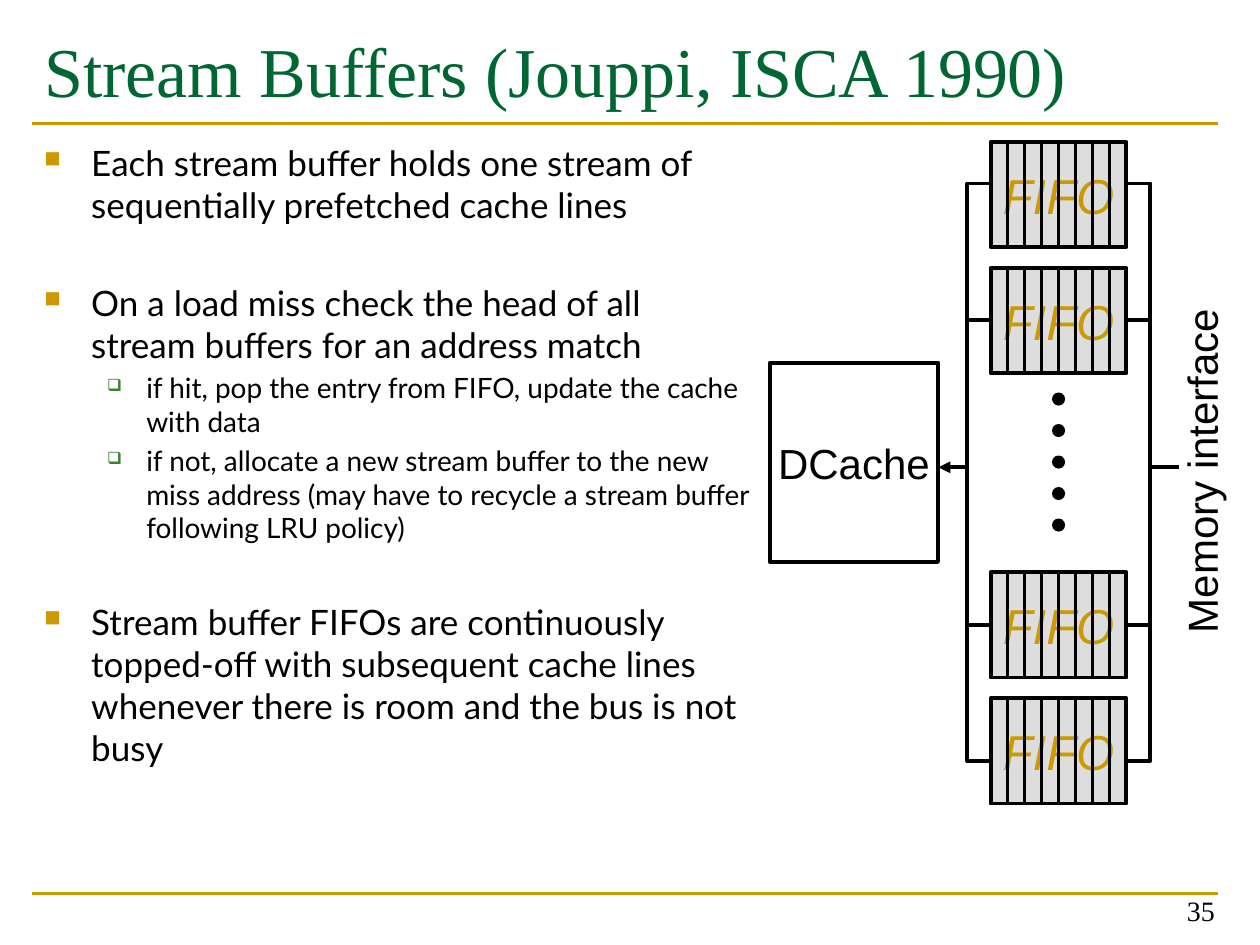
import pptx
import pptx.util
import pptx.dml.color
import pptx.enum.shapes
import pptx.enum.text
import pptx.oxml.ns
import lxml.etree

Cm, Pt = pptx.util.Cm, pptx.util.Pt
SHAPE = pptx.enum.shapes.MSO_SHAPE
ALIGN = pptx.enum.text.PP_ALIGN
ANCHOR = pptx.enum.text.MSO_ANCHOR

COLORS = {
    "gold": "CC9900", "title": "006633", "sub_bullet": "3B812F",
    "black": "000000", "white": "FFFFFF", "fifo": "DDDDDD",
}

# Bullet levels: size, left margin, hanging indent (cm), mark, colour, mark size %
LEVELS = [
    (20, 0.95, 0.95, "■", "gold", 65),
    (16, 2.06, 0.79, "❑", "sub_bullet", 60),
]

# Level, extra space above (pt), wording
POINTS = [
    (0, 0, "Each stream buffer holds one stream of sequentially prefetched cache lines"),
    (0, 28, "On a load miss check the head of all stream buffers for an address match"),
    (1, 0, "if hit, pop the entry from FIFO, update the cache with data"),
    (1, 0, "if not, allocate a new stream buffer to the new miss address "
           "(may have to recycle a stream buffer following LRU policy)"),
    (0, 28, "Stream buffer FIFOs are continuously topped-off with subsequent "
            "cache lines whenever there is room and the bus is not busy"),
]


def rgb(name):
    return pptx.dml.color.RGBColor.from_string(COLORS[name])


def add_child(parent, tag, **attributes):
    return lxml.etree.SubElement(parent, pptx.oxml.ns.qn(tag), attributes)


def add_span(para, text, size, font, color="black", italic=False):
    span = para.add_run()
    span.text = text
    span.font.size = Pt(size)
    span.font.name = font
    span.font.italic = italic
    span.font.color.rgb = rgb(color)


def add_line(shapes, x1, y1, x2, y2, width, color="black", arrow=False):
    line = shapes.add_connector(pptx.enum.shapes.MSO_CONNECTOR.STRAIGHT,
                                Cm(x1), Cm(y1), Cm(x2), Cm(y2))
    line.line.width = Pt(width)
    line.line.color.rgb = rgb(color)
    if arrow:
        add_child(line.line._get_or_add_ln(), "a:tailEnd", type="triangle")
    add_child(line._element.spPr, "a:effectLst")


def add_block(shapes, kind, left, top, width, height, fill, line_width=2.25):
    block = shapes.add_shape(kind, Cm(left), Cm(top), Cm(width), Cm(height))
    block.shadow.inherit = False
    block.fill.solid()
    block.fill.fore_color.rgb = rgb(fill)
    block.line.color.rgb = rgb("black")
    block.line.width = Pt(line_width)
    return block


def add_label(block, text, size, color="black", italic=False):
    frame = block.text_frame
    frame.word_wrap = False
    frame.vertical_anchor = ANCHOR.MIDDLE
    para = frame.paragraphs[0]
    para.alignment = ALIGN.CENTER
    add_span(para, text, size, "Arial", color, italic)


def add_text_box(page, left, top, width, height):
    box = page.shapes.add_textbox(Cm(left), Cm(top), Cm(width), Cm(height))
    box.text_frame.word_wrap = True
    return box


def add_header(page, left, top, width, height):
    add_line(page.shapes, left, top + 2.06, left + width, top + 2.06, 1.5, "gold")
    box = add_text_box(page, left, top, width, height)
    add_span(box.text_frame.paragraphs[0], "Stream Buffers (Jouppi, ISCA 1990)",
             40, "Times New Roman", "title")


def add_footer(page, left, top, width, height):
    add_line(page.shapes, left, top, left + width, top, 1.5, "gold")
    box = add_text_box(page, left + width - 5.74, top - 0.46, 5.92, height)
    box.text_frame.vertical_anchor = ANCHOR.BOTTOM
    para = box.text_frame.paragraphs[0]
    para.alignment = ALIGN.RIGHT
    add_span(para, "35", 16, "Times New Roman")


def add_points(page, left, top, width, height):
    frame = add_text_box(page, left, top, width, height).text_frame
    for index, (level, extra, text) in enumerate(POINTS):
        size, margin, hang, mark, color, percent = LEVELS[level]
        para = frame.add_paragraph() if index else frame.paragraphs[0]
        para.level = level
        para.space_before = Pt(size * 0.2 + extra)
        props = para._p.get_or_add_pPr()
        props.set("marL", str(Cm(margin)))
        props.set("indent", str(-Cm(hang)))
        add_child(add_child(props, "a:buClr"), "a:srgbClr", val=COLORS[color])
        add_child(props, "a:buSzPct", val=str(percent * 1000))
        add_child(props, "a:buChar", char=mark)
        add_span(para, text, size, "Lato")


def add_fifo(page, left, top, width, height, slots=8):
    shapes = page.shapes.add_group_shape().shapes
    block = add_block(shapes, SHAPE.RECTANGLE, left, top, width, height, "fifo")
    add_label(block, "FIFO", 28, "gold", italic=True)
    for slot in range(1, slots):
        x = left + width * slot / slots
        add_line(shapes, x, top, x, top + height, 1.5)


def add_bus(page, rail, top, reach, height, stub, arrow=False):
    """Vertical rail with taps towards the FIFOs and a stub the other way."""
    shapes = page.shapes.add_group_shape().shapes
    inner, bottom = rail + reach, top + height
    builder = shapes.build_freeform(Cm(inner), Cm(top))
    builder.add_line_segments(
        [(Cm(rail), Cm(top)), (Cm(rail), Cm(bottom)), (Cm(inner), Cm(bottom))],
        close=False)
    bracket = builder.convert_to_shape()
    bracket.shadow.inherit = False
    bracket.fill.background()
    bracket.line.color.rgb = rgb("black")
    bracket.line.width = Pt(2.25)
    for y in (top + 2.75, bottom - 2.75):
        add_line(shapes, rail, y, inner, y, 2.25)
    middle = top + 5.72
    add_line(shapes, rail, middle, rail + stub, middle, 2.25, arrow=arrow)


def add_diagram(page, left, top, width, height):
    # Stream buffers: a pair at the top and a pair at the bottom
    fifo_left, fifo_width, fifo_height, pitch = left + 4.45, 2.74, 2.12, 2.54
    last = height - fifo_height
    for offset in (0, pitch, last - pitch, last):
        add_fifo(page, fifo_left, top + offset, fifo_width, fifo_height)

    # Buses on both sides, and the cache
    fifo_right = fifo_left + fifo_width
    add_bus(page, fifo_left - 0.47, top + 0.84, 0.47, 11.64, -0.58, arrow=True)
    cache = add_block(page.shapes, SHAPE.RECTANGLE, left, top + 4.45, 3.39, 4.02, "white")
    add_label(cache, "DCache", 24)
    add_bus(page, fifo_right + 0.48, top + 0.84, -0.48, 11.64, 0.58)

    # Dots between the pairs
    dot = 0.21
    for index in range(5):
        add_block(page.shapes, SHAPE.OVAL, fifo_left + (fifo_width - dot) / 2,
                  top + 5.08 + 0.635 * index, dot, dot, "black", 1.5)

    # Label along the right edge
    label_width, label_height = 7.06, 1.27
    label = add_text_box(page, left + width - (label_width + label_height) / 2,
                         top + 6.0, label_width, label_height)
    label.rotation = 270
    add_label(label, "Memory interface", 24)


def main():
    deck = pptx.Presentation()
    deck.slide_width, deck.slide_height = Cm(25.4), Cm(19.05)
    page = deck.slides.add_slide(deck.slide_layouts[6])
    add_header(page, 0.64, 0.43, 23.92, 2.97)
    add_points(page, 0.64, 2.72, 14.81, 14.43)
    add_diagram(page, 15.52, 2.86, 9.33, 13.34)
    add_footer(page, 0.64, 18.01, 23.92, 1.27)
    deck.save("out.pptx")


if __name__ == "__main__":
    main()
